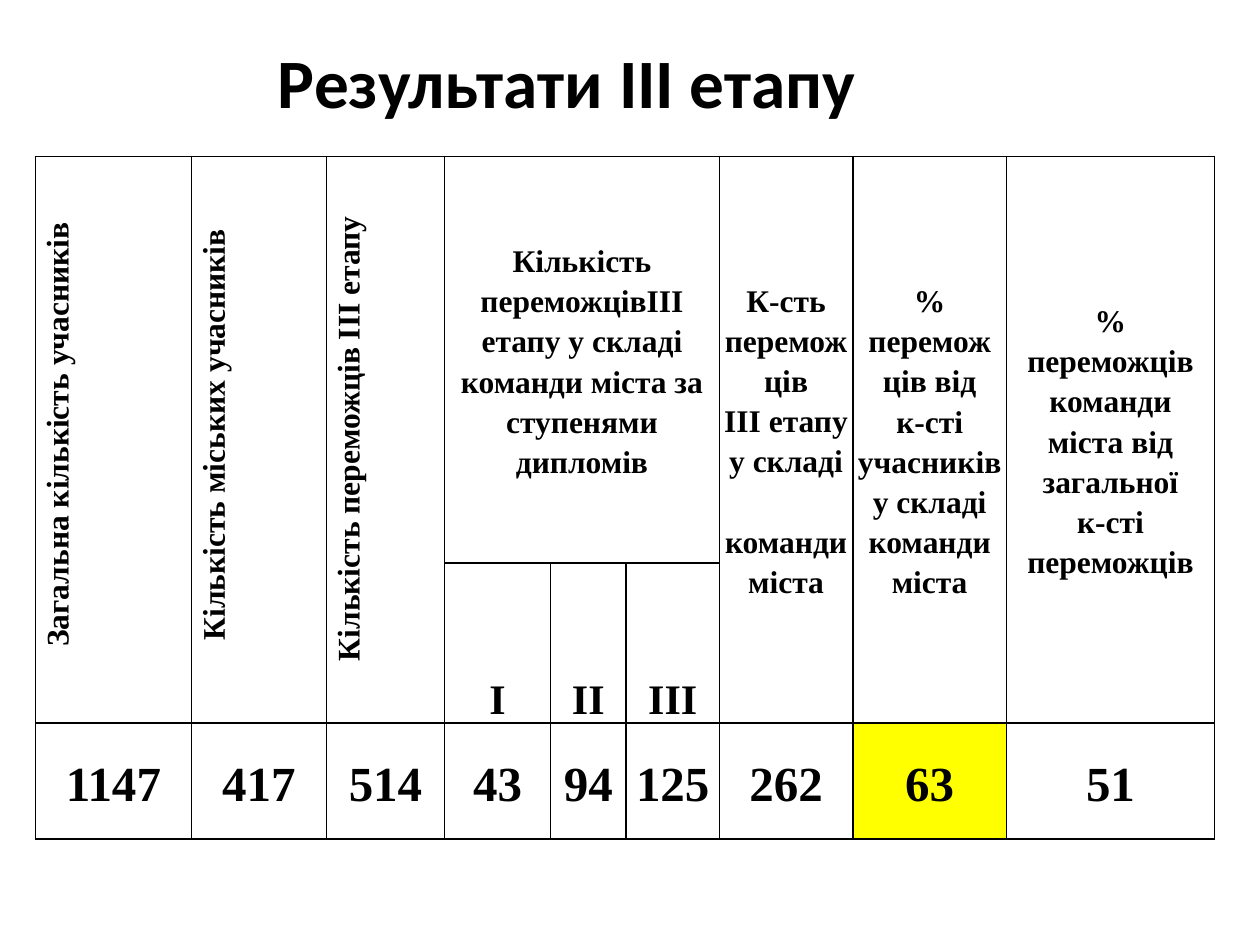
from pptx import Presentation
from pptx.dml.color import RGBColor
from pptx.enum.text import MSO_ANCHOR, PP_ALIGN
from pptx.oxml.ns import qn
from pptx.util import Inches, Pt
from lxml import etree

CENTER = PP_ALIGN.CENTER
MIDDLE, BOTTOM = MSO_ANCHOR.MIDDLE, MSO_ANCHOR.BOTTOM
TITLE_ONLY = 5

COLORS = {"ink": "000000", "highlight": "FFFF00"}

COL_WIDTHS = [1.06, 0.18, 0.42, 0.6, 0.05, 0.94, 0.84, 0.6,
              0.6, 0.14, 0.46, 0.6, 0.42, 0.6, 0.2, 1.65]
ROW_HEIGHTS = [0.25, 3.23, 1.27, 0.92]

# Merged groups of the empty spacer row: first column, column count
SPACER_SPANS = [(1, 2), (4, 4), (9, 2), (14, 2)]

# Headings: row, column, row span, column span, lines, format
TURNED = {"vert": "vert270", "indent": 0.08}
DEGREE = {"size": 24, "anchor": BOTTOM}
HEADINGS = [
    (1, 0, 2, 2, ["Загальна кількість учасників"], TURNED),
    (1, 2, 2, 3, ["Кількість міських учасників"], TURNED),
    (1, 5, 2, 1, ["Кількість переможців IIІ етапу\u00a0"], TURNED),
    (1, 6, 1, 4, ["Кількість переможцівIIІ етапу у складі команди міста "
                  "за ступенями дипломів"], {}),
    (1, 10, 2, 2, ["К-сть переможців", "IIІ етапу", "у складі",
                   "команди міста"], {"last_gap": 23}),
    (1, 12, 2, 3, ["% перемож", "ців від", "к-сті учасників",
                   "у складі команди міста"], {}),
    (1, 15, 2, 1, ["% переможців команди міста від загальної",
                   "к-сті переможців"], {}),
    (2, 6, 1, 1, ["І"], DEGREE),
    (2, 7, 1, 1, ["II"], DEGREE),
    (2, 8, 1, 2, ["III"], DEGREE),
]

# Results: value, column span
RESULTS = [("1147", 2), ("417", 3), ("514", 1), ("43", 1), ("94", 1),
           ("125", 2), ("262", 2), ("63", 3), ("51", 1)]


def write(p, text, font="Times New Roman", size=18, spacing=None, gap=0, indent=0):
    """Fill a paragraph with one bold centred run."""
    p.alignment = CENTER
    if spacing:
        p.line_spacing = spacing
    if gap:
        p.space_before = Pt(gap)
    if indent:
        pPr = p._p.get_or_add_pPr()
        pPr.set("marL", str(Inches(indent)))
        pPr.set("indent", "0")
    r = p.add_run()
    r.text = text
    r.font.name, r.font.size, r.font.bold = font, Pt(size), True
    r.font.color.rgb = RGBColor.from_string(COLORS["ink"])


class SlideBuilder:
    line_width = Pt(1)
    line_spacing = 1.15
    side_margin = Inches(0.02)

    def __init__(self, prs):
        self.s = prs.slides.add_slide(prs.slide_layouts[TITLE_ONLY])

    def title(self, text, left, top, width, height):
        sp = self.s.shapes.title
        sp.left, sp.top = Inches(left), Inches(top)
        sp.width, sp.height = Inches(width), Inches(height)
        tf = sp.text_frame
        tf.vertical_anchor = MIDDLE
        write(tf.paragraphs[0], text, font="Calibri", size=39.6)

    def table(self, left, top, widths, heights):
        frame = self.s.shapes.add_table(
            len(heights), len(widths), Inches(left), Inches(top),
            Inches(sum(widths)), Inches(sum(heights)))
        self.tbl = frame.table
        self.tbl.first_row = self.tbl.horz_banding = False
        for col, width in zip(self.tbl.columns, widths):
            col.width = Inches(width)
        for row, height in zip(self.tbl.rows, heights):
            row.height = Inches(height)
        for i, row in enumerate(self.tbl.rows):
            for cell in row.cells:
                cell.margin_left = cell.margin_right = self.side_margin
                cell.margin_top = cell.margin_bottom = 0
                self.borders(cell, "B" if i == 0 else "LRTB")
                cell.fill.background()
                if i == 0:  # keeps the empty row low
                    p = cell.text_frame.paragraphs[0]._p
                    etree.SubElement(p, qn("a:endParaRPr"), sz="1000")

    def borders(self, cell, drawn):
        tcPr = cell._tc.get_or_add_tcPr()
        for side in "LRTB":
            ln = etree.SubElement(tcPr, qn("a:ln" + side), w=str(self.line_width))
            if side in drawn:
                fill = etree.SubElement(ln, qn("a:solidFill"))
                etree.SubElement(fill, qn("a:srgbClr"), val=COLORS["ink"])
            else:
                etree.SubElement(ln, qn("a:noFill"))

    def merge(self, row, col, rows, cols):
        cell = self.tbl.cell(row, col)
        if rows * cols > 1:
            cell.merge(self.tbl.cell(row + rows - 1, col + cols - 1))
        return cell

    def cell(self, row, col, rows, cols, lines, size=18, anchor=MIDDLE,
             vert=None, indent=0, last_gap=0, fill=None):
        cell = self.merge(row, col, rows, cols)
        cell.vertical_anchor = anchor
        if vert:
            cell._tc.get_or_add_tcPr().set("vert", vert)
        if fill:
            cell.fill.solid()
            cell.fill.fore_color.rgb = RGBColor.from_string(fill)
        tf = cell.text_frame
        for i, text in enumerate(lines):
            p = tf.add_paragraph() if i else tf.paragraphs[0]
            write(p, text, size=size, spacing=self.line_spacing, indent=indent,
                  gap=last_gap if i == len(lines) - 1 else 0)


def main():
    prs = Presentation()
    prs.slide_width, prs.slide_height = Inches(10), Inches(7.5)
    slide = SlideBuilder(prs)

    # Title
    slide.title("Результати ІІІ етапу", 0, 0.3, 9, 0.69)

    # Table grid and spacer row
    slide.table(0.28, 0.99, COL_WIDTHS, ROW_HEIGHTS)
    for col, cols in SPACER_SPANS:
        slide.merge(0, col, 1, cols)

    # Headings
    for row, col, rows, cols, lines, style in HEADINGS:
        slide.cell(row, col, rows, cols, lines, **style)

    # Results
    col = 0
    for value, cols in RESULTS:
        fill = COLORS["highlight"] if value == "63" else None
        slide.cell(3, col, 1, cols, [value], size=28, fill=fill)
        col += cols

    prs.save("out.pptx")


if __name__ == "__main__":
    main()
